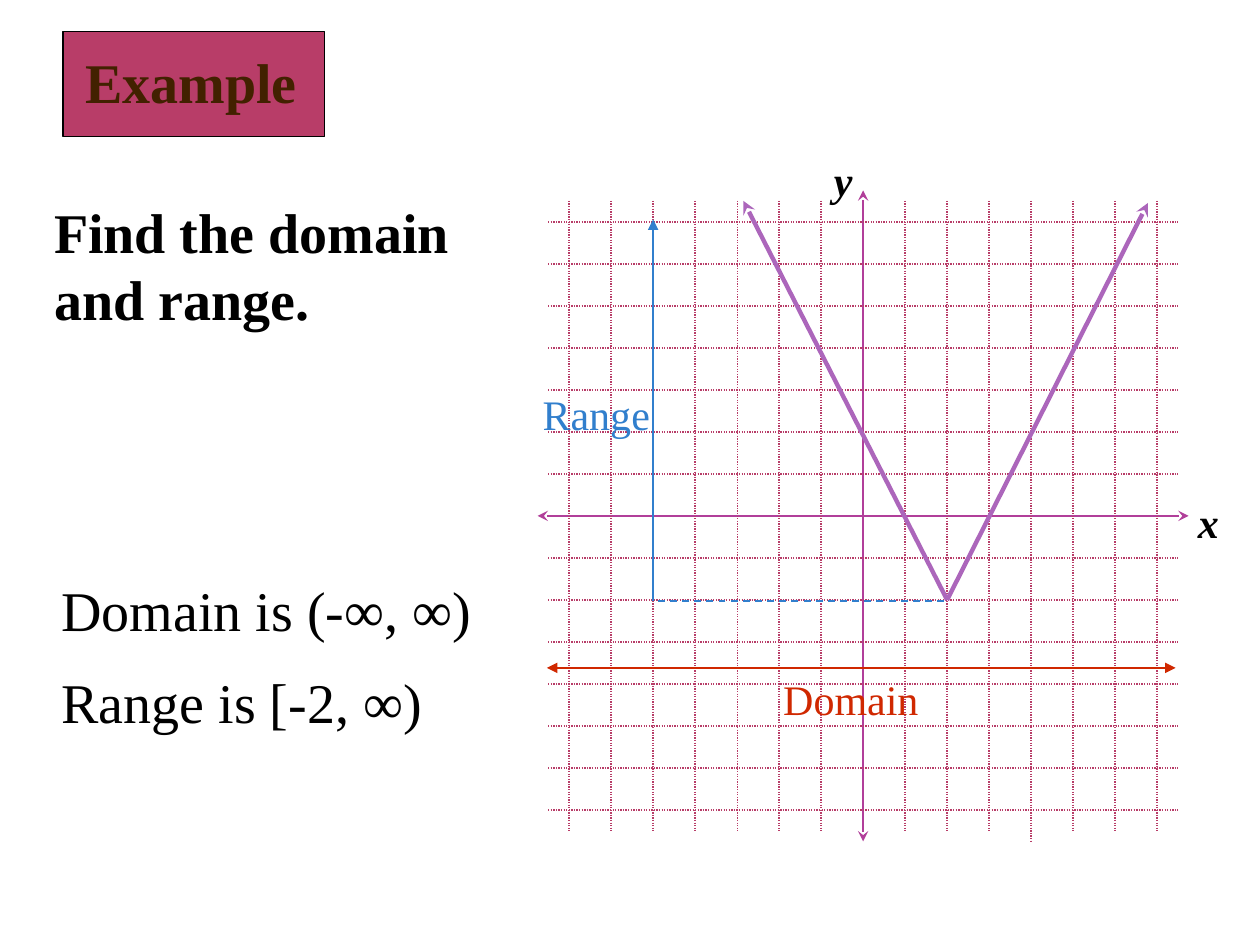
from lxml import etree
from pptx import Presentation
from pptx.dml.color import RGBColor
from pptx.enum import dml, shapes, text
from pptx.oxml import ns
from pptx.util import Cm, Pt

BLACK = RGBColor(0x00, 0x00, 0x00)
BROWN = RGBColor(0x42, 0x21, 0x00)
ROSE = RGBColor(0xB8, 0x3D, 0x68)
MAGENTA = RGBColor(0xB1, 0x3F, 0x9A)
PURPLE = RGBColor(0xAC, 0x66, 0xBB)
RED = RGBColor(0xD0, 0x28, 0x00)
BLUE = RGBColor(0x31, 0x7F, 0xCD)

# Graph plane: centimetres for the origin and one unit, units for the rest
ORIGIN_X, ORIGIN_Y = 17.4, 10.4
UNIT = 2.54 / 3
GRID_REACH, AXIS_REACH = 7.5, 7.75
VERTEX = (2, -2)

DOTTED = {"color": ROSE, "width": 0.75, "dash": dml.MSO_LINE.ROUND_DOT}
AXIS = {"color": MAGENTA, "width": 1.5, "head": "stealth", "tail": "stealth"}
ARM = {"color": PURPLE, "width": 2.5, "tail": "stealth"}
DOMAIN = {"color": RED, "width": 1, "head": "triangle", "tail": "triangle"}
RANGE = {"color": BLUE, "width": 1, "tail": "triangle"}
LEVEL = {"color": BLUE, "width": 1, "dash": dml.MSO_LINE.DASH}

AXES = [
    ((0, AXIS_REACH), (0, -AXIS_REACH), AXIS),
    ((-AXIS_REACH, 0), (AXIS_REACH, 0), AXIS),
]
CURVE_AND_SPANS = [
    (VERTEX, (6.78, 7.45), ARM),
    (VERTEX, (-2.85, 7.5), ARM),
    ((-7.53, -3.62), (7.44, -3.62), DOMAIN),
    ((1.93, -2.03), (-4.95, -2.03), LEVEL),
    ((-5, -2.03), (-5, 7.06), RANGE),
]

BIG = {"size": Pt(32), "bold": False, "italic": False}
BIG_BOLD = {**BIG, "bold": True}
LABEL = {**BIG, "size": Pt(24)}
AXIS_NAME = {"size": Pt(24), "bold": True, "italic": True}

# Wording, (left, top, width, height) in cm, colour, font values, wrap
TEXTS = [
    ("Example", (1.47, 0.84, 4.85, 1.6), BROWN, BIG_BOLD, True),
    ("Find the domain and range.", (0.84, 3.86, 8.99, 3), BLACK, BIG_BOLD, True),
    ("x", (23.9, 9.88, 0.94, 1.27), BLACK, AXIS_NAME, False),
    ("y", (16.56, 3, 0.89, 1.27), BLACK, AXIS_NAME, False),
    ("Domain is (-∞, ∞)", (0.99, 11.48, 8.79, 1.6), BLACK, BIG, True),
    ("Range is [-2, ∞)", (0.99, 13.33, 8.79, 1.6), BLACK, BIG, True),
    ("Domain", (15.54, 13.46, 3.4, 1.27), RED, LABEL, True),
    ("Range", (10.69, 7.7, 2.82, 1.27), BLUE, LABEL, True),
]


def place(point):
    x, y = point
    return Cm(ORIGIN_X + x * UNIT), Cm(ORIGIN_Y - y * UNIT)


def add_line(page, start, end, style):
    line = page.shapes.add_connector(
        shapes.MSO_CONNECTOR.STRAIGHT, *place(start), *place(end))
    line.line.color.rgb = style["color"]
    line.line.width = Pt(style["width"])
    if "dash" in style:
        line.line.dash_style = style["dash"]
    outline = line.line._get_or_add_ln()
    for side in ("head", "tail"):
        if side in style:
            etree.SubElement(outline, ns.qn(f"a:{side}End"), type=style[side])
    etree.SubElement(line._element.spPr, ns.qn("a:effectLst"))


def add_text(page, wording, area, color, values, wrap):
    box = page.shapes.add_textbox(*map(Cm, area))
    frame = box.text_frame
    frame.word_wrap = wrap
    frame.auto_size = text.MSO_AUTO_SIZE.SHAPE_TO_FIT_TEXT
    span = frame.paragraphs[0].add_run()
    span.text = wording
    span.font.name = "Times New Roman"
    span.font.color.rgb = color
    for name, value in values.items():
        setattr(span.font, name, value)


def main():
    deck = Presentation()
    deck.slide_width, deck.slide_height = Cm(25.4), Cm(19.05)
    page = deck.slides.add_slide(deck.slide_layouts[6])

    # Title plate
    plate = page.shapes.add_shape(
        shapes.MSO_SHAPE.RECTANGLE, Cm(1.27), Cm(0.64), Cm(5.28), Cm(2.11))
    plate.shadow.inherit = False
    plate.fill.solid()
    plate.fill.fore_color.rgb = ROSE
    plate.line.color.rgb = BLACK
    plate.line.width = Pt(0.75)

    # Axes and grid; the line x = 4 runs down as far as the axis
    for start, end, style in AXES:
        add_line(page, start, end, style)
    for step in range(-7, 8):
        if step:
            bottom = -AXIS_REACH if step == 4 else -GRID_REACH
            add_line(page, (-GRID_REACH, step), (GRID_REACH, step), DOTTED)
            add_line(page, (step, GRID_REACH), (step, bottom), DOTTED)

    # Curve with its domain and range
    for start, end, style in CURVE_AND_SPANS:
        add_line(page, start, end, style)

    # Wording
    for entry in TEXTS:
        add_text(page, *entry)

    deck.save("out.pptx")


if __name__ == "__main__":
    main()
